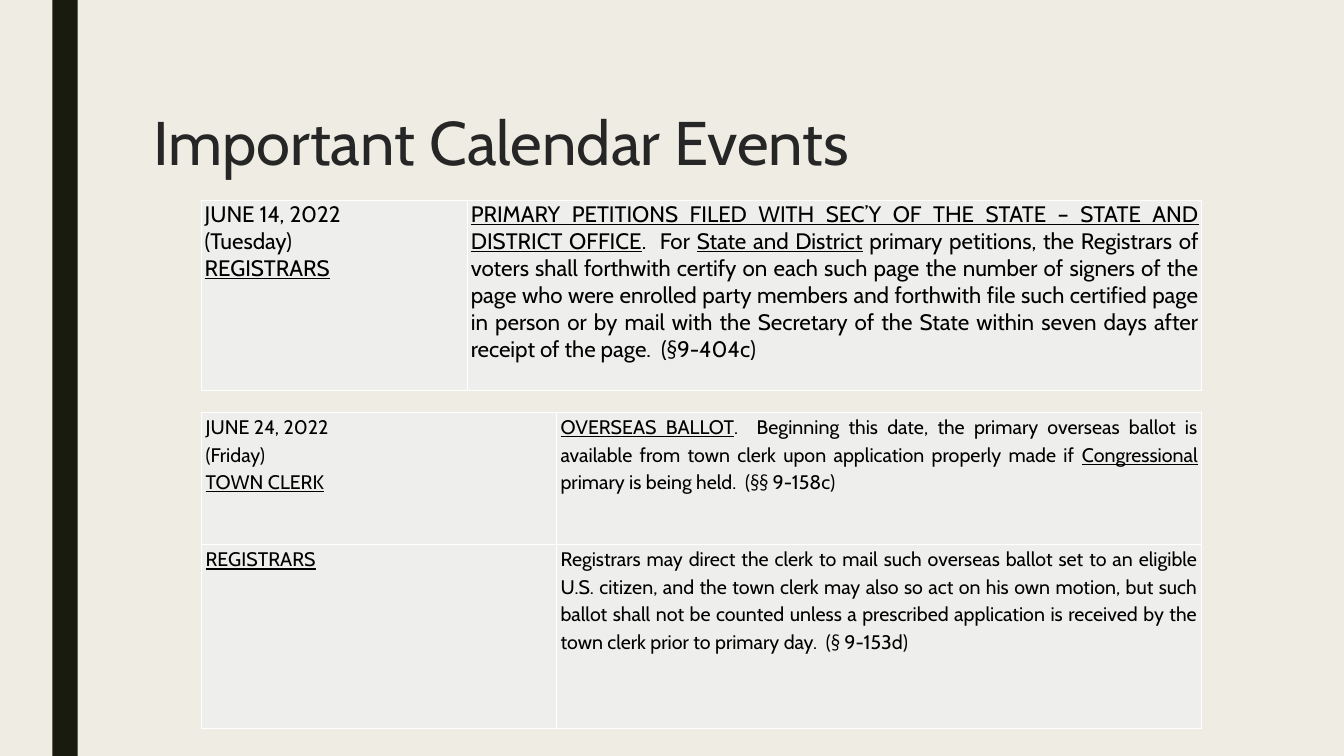
"""Builds the slide of important calendar events with its two date tables."""
from lxml import etree
from pptx import Presentation
from pptx.dml.color import RGBColor
from pptx.enum.shapes import MSO_SHAPE
from pptx.enum.text import MSO_ANCHOR, PP_ALIGN
from pptx.oxml.ns import qn
from pptx.util import Inches, Pt

RECT = MSO_SHAPE.RECTANGLE
TOP = MSO_ANCHOR.TOP
LEFT, JUST = PP_ALIGN.LEFT, PP_ALIGN.JUSTIFY

THEME = {
    "font": "Cabin", "back": "EFEDE3", "bar": "191B0E", "title": "262626",
    "ink": "000000", "cell": "EEEEED", "line": "FFFFFF",
    "head": 44, "large": 16, "small": 14,
}
WIDE, HIGH = 13.33, 7.5
EDGE = 2

TABLES = [
    {"top": 1.99, "cols": [2.64, 7.28], "rows": [1.88], "size": "large",
     "pad": 0.03, "space": 1.0, "align": [JUST, JUST],
     "cells": [[
         ["JUNE 14, 2022", "(Tuesday)", "_REGISTRARS_"],
         ["_PRIMARY PETITIONS FILED WITH SEC’Y OF THE STATE – STATE AND "
          "DISTRICT OFFICE_.  For _State and District_ primary petitions, "
          "the Registrars of voters shall forthwith certify on each such page "
          "the number of signers of the page who were enrolled party members "
          "and forthwith file such certified page in person or by mail with "
          "the Secretary of the State within seven days after receipt of the "
          "page.  (§9-404c)"],
     ]]},
    {"top": 4.09, "cols": [3.52, 6.4], "rows": [1.31, 1.83], "size": "small",
     "pad": 0.04, "space": 1.15, "align": [LEFT, JUST],
     "cells": [
         [["JUNE 24, 2022", "(Friday)", "_TOWN CLERK_"],
          ["_OVERSEAS BALLOT_.  Beginning this date, the primary overseas "
           "ballot is available from town clerk upon application properly "
           "made if _Congressional_ primary is being held.  (§§ 9-158c)"]],
         [["_REGISTRARS_"],
          ["Registrars may direct the clerk to mail such overseas ballot set "
           "to an eligible U.S. citizen, and the town clerk may also so act "
           "on his own motion, but such ballot shall not be counted unless a "
           "prescribed application is received by the town clerk prior to "
           "primary day.  (§ 9-153d)"]],
     ]},
]


def style(run, size, ink):
    """Set the font, size and colour of a run."""
    run.font.name = THEME["font"]
    run.font.size = Pt(THEME[size])
    run.font.color.rgb = RGBColor.from_string(THEME[ink])


def border(cell):
    """Draw a thin line on all four sides of a cell."""
    props = cell._tc.get_or_add_tcPr()
    for i, side in enumerate(["lnL", "lnR", "lnT", "lnB"]):
        line = etree.Element(qn("a:" + side), w=str(Pt(1)))
        fill = etree.SubElement(line, qn("a:solidFill"))
        etree.SubElement(fill, qn("a:srgbClr"), val=THEME["line"])
        props.insert(i, line)


deck = Presentation()
deck.slide_width, deck.slide_height = Inches(WIDE), Inches(HIGH)
slide = deck.slides.add_slide(deck.slide_layouts[6])
slide.background.fill.solid()
slide.background.fill.fore_color.rgb = RGBColor.from_string(THEME["back"])

bar = slide.shapes.add_shape(RECT, Inches(0.52), 0, Inches(0.25), Inches(HIGH))
bar.shadow.inherit = False
bar.fill.solid()
bar.fill.fore_color.rgb = RGBColor.from_string(THEME["bar"])
bar.line.fill.background()

title = slide.shapes.add_textbox(
    Inches(1.42), Inches(1.07), Inches(10.5), Inches(1.43)).text_frame
title.word_wrap = True
title.vertical_anchor = TOP
title.text = "Important Calendar Events"
title.paragraphs[0].line_spacing = 0.89
style(title.paragraphs[0].runs[0], "head", "title")

for item in TABLES:
    cols, rows = item["cols"], item["rows"]
    table = slide.shapes.add_table(
        len(rows), len(cols), Inches(EDGE), Inches(item["top"]),
        Inches(sum(cols)), Inches(sum(rows))).table
    table.first_row = table.horz_banding = False
    for col, width in zip(table.columns, cols):
        col.width = Inches(width)
    for r, height in enumerate(rows):
        table.rows[r].height = Inches(height)
        for c, align in enumerate(item["align"]):
            cell = table.cell(r, c)
            cell.fill.solid()
            cell.fill.fore_color.rgb = RGBColor.from_string(THEME["cell"])
            border(cell)
            cell.margin_left = cell.margin_right = Inches(item["pad"])
            cell.margin_top = cell.margin_bottom = 0
            lines = item["cells"][r][c]
            cell.text_frame.text = "\n".join(lines)
            for para, text in zip(cell.text_frame.paragraphs, lines):
                para.alignment = align
                para.line_spacing = item["space"]
                para.clear()
                for i, part in enumerate(text.split("_")):
                    if part:
                        run = para.add_run()
                        run.text = part
                        run.font.underline = i % 2 == 1
                        style(run, item["size"], "ink")

deck.save("out.pptx")
